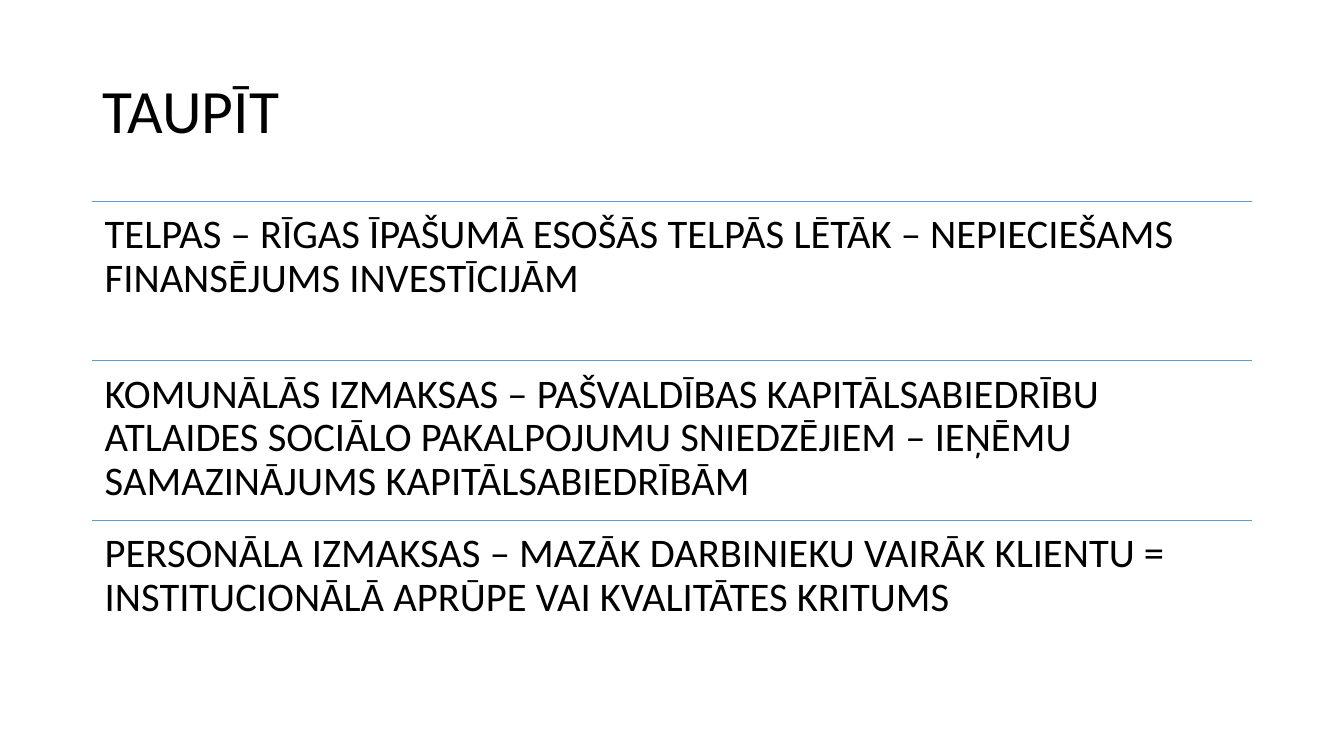
from lxml import etree
from pptx import Presentation
from pptx.dml.color import RGBColor
from pptx.enum.shapes import MSO_CONNECTOR as Connector
from pptx.enum.text import MSO_ANCHOR as Anchor, MSO_AUTO_SIZE as AutoSize, PP_ALIGN as Align
from pptx.oxml.ns import qn
from pptx.util import Cm, Pt

BLACK = RGBColor(0x00, 0x00, 0x00)
BLUE = RGBColor(0x5B, 0x9B, 0xD5)
FONT = "Calibri"

LEFT, WIDTH = Cm(2.33), Cm(29.21)
FIRST_TOP, ROW_HEIGHT = Cm(5.07), Cm(4.02)
INSET = Cm(0.31)

SAVINGS = [
    "TELPAS – RĪGAS ĪPAŠUMĀ ESOŠĀS TELPĀS LĒTĀK – NEPIECIEŠAMS FINANSĒJUMS INVESTĪCIJĀM",
    "KOMUNĀLĀS IZMAKSAS – PAŠVALDĪBAS KAPITĀLSABIEDRĪBU ATLAIDES SOCIĀLO PAKALPOJUMU "
    "SNIEDZĒJIEM – IEŅĒMU SAMAZINĀJUMS KAPITĀLSABIEDRĪBĀM",
    "PERSONĀLA IZMAKSAS – MAZĀK DARBINIEKU VAIRĀK KLIENTU = INSTITUCIONĀLĀ APRŪPE "
    "VAI KVALITĀTES KRITUMS",
]


def write(frame, text, size, anchor):
    frame.word_wrap = True
    frame.auto_size = AutoSize.NONE
    frame.vertical_anchor = anchor
    frame.text = text
    paragraph = frame.paragraphs[0]
    paragraph.alignment = Align.LEFT
    paragraph.line_spacing = 0.9
    paragraph.font.name = FONT
    paragraph.font.size = Pt(size)
    paragraph.font.color.rgb = BLACK


def set_title(slide, text):
    title = slide.shapes.title
    title.left, title.top, title.width, title.height = LEFT, Cm(1.01), WIDTH, Cm(3.68)
    write(title.text_frame, text, 44, Anchor.MIDDLE)


def add_rule(slide, top):
    rule = slide.shapes.add_connector(Connector.STRAIGHT, LEFT, top, LEFT + WIDTH, top)
    rule.line.color.rgb = BLUE
    rule.line.width = Pt(1)
    etree.SubElement(rule._element.spPr, qn("a:effectLst"))


def add_saving(slide, top, text):
    frame = slide.shapes.add_textbox(LEFT, top, WIDTH, ROW_HEIGHT).text_frame
    frame.margin_left = frame.margin_right = INSET
    frame.margin_top = frame.margin_bottom = INSET
    write(frame, text, 29, Anchor.TOP)


def main():
    deck = Presentation()
    deck.slide_width, deck.slide_height = Cm(33.87), Cm(19.05)
    slide = deck.slides.add_slide(deck.slide_layouts.get_by_name("Title Only"))
    set_title(slide, "TAUPĪT")
    for row, saving in enumerate(SAVINGS):
        top = FIRST_TOP + row * ROW_HEIGHT
        add_rule(slide, top)
        add_saving(slide, top, saving)
    deck.save("out.pptx")


if __name__ == "__main__":
    main()
